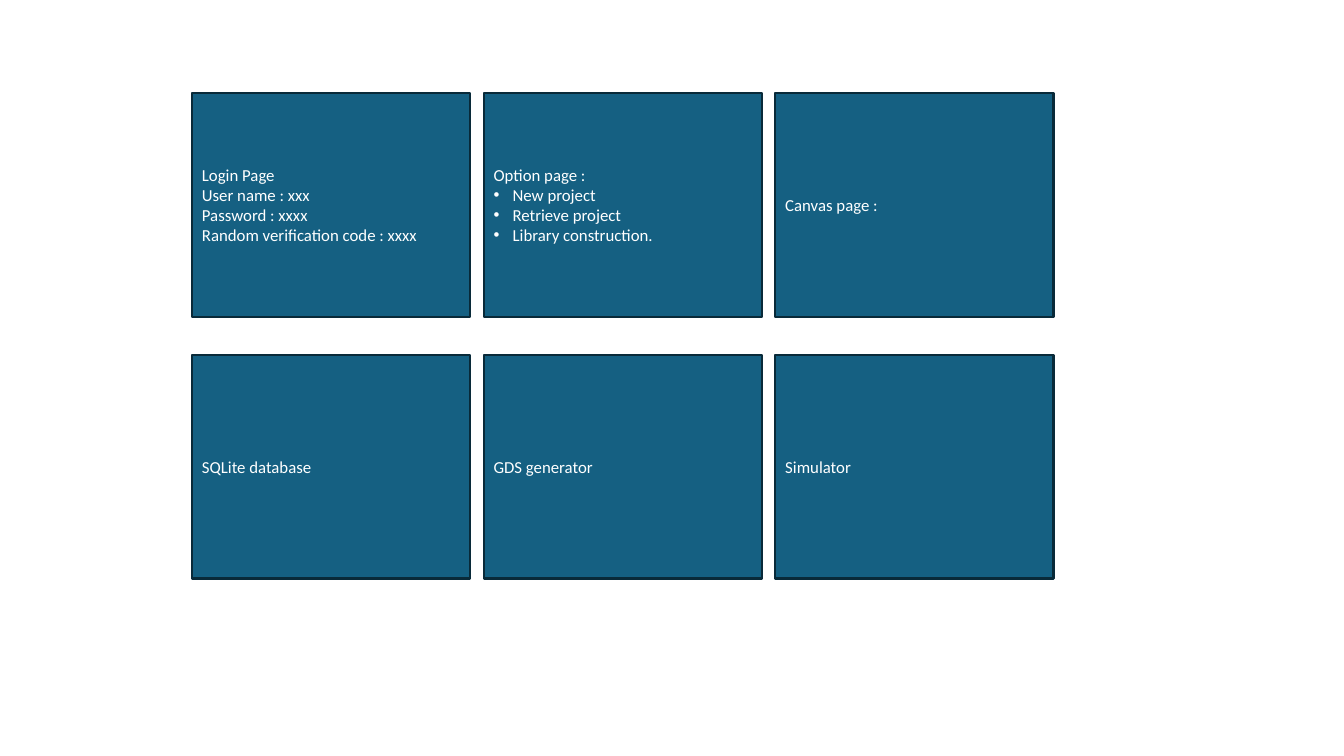
from lxml import etree
from pptx import Presentation
from pptx import util as u
from pptx.dml.color import RGBColor
from pptx.enum import shapes, text
from pptx.oxml.ns import qn

PANEL_FILL = RGBColor(0x15, 0x60, 0x82)
PANEL_LINE = RGBColor(0x09, 0x2A, 0x39)
PANEL_TEXT = RGBColor(0xFF, 0xFF, 0xFF)

BULLET_INDENT = u.Cm(0.48)
PANEL_WIDTH, PANEL_HEIGHT = u.Cm(7.01), u.Cm(5.64)
COLUMN_GAP, ROW_GAP = u.Cm(0.34), u.Cm(0.96)

PANEL_ROWS = [
    [
        (["Login Page", "User name : xxx", "Password : xxxx",
          "Random verification code : xxxx"], []),
        (["Option page :"],
         ["New project", "Retrieve project", "Library construction."]),
        (["Canvas page :"], []),
    ],
    [
        (["SQLite database"], []),
        (["GDS generator"], []),
        (["Simulator"], []),
    ],
]


def add_bullet(paragraph):
    properties = paragraph._p.get_or_add_pPr()
    properties.set("marL", str(BULLET_INDENT))
    properties.set("indent", str(-BULLET_INDENT))
    etree.SubElement(properties, qn("a:buFont"), typeface="Arial")
    etree.SubElement(properties, qn("a:buChar"), char="•")


def add_panel(slide, left, top, width, height, lines, bullets):
    panel = slide.shapes.add_shape(
        shapes.MSO_SHAPE.RECTANGLE, left, top, width, height)
    panel.shadow.inherit = False
    panel.fill.solid()
    panel.fill.fore_color.rgb = PANEL_FILL
    panel.line.color.rgb = PANEL_LINE
    panel.line.width = u.Pt(1.5)

    frame = panel.text_frame
    frame.word_wrap = True
    frame.vertical_anchor = text.MSO_ANCHOR.MIDDLE
    for index, wording in enumerate(lines + bullets):
        paragraph = frame.add_paragraph() if index else frame.paragraphs[0]
        paragraph.alignment = text.PP_ALIGN.LEFT
        if index >= len(lines):
            add_bullet(paragraph)
        run = paragraph.add_run()
        run.text = wording
        run.font.name = "Calibri"
        run.font.size = u.Pt(12)
        run.font.color.rgb = PANEL_TEXT


def add_panel_grid(slide, left, top):
    for row, panels in enumerate(PANEL_ROWS):
        for column, (lines, bullets) in enumerate(panels):
            add_panel(
                slide,
                left + column * (PANEL_WIDTH + COLUMN_GAP),
                top + row * (PANEL_HEIGHT + ROW_GAP),
                PANEL_WIDTH, PANEL_HEIGHT, lines, bullets)


def main():
    presentation = Presentation()
    presentation.slide_width = u.Cm(33.87)
    presentation.slide_height = u.Cm(19.05)
    slide = presentation.slides.add_slide(presentation.slide_layouts[6])
    add_panel_grid(slide, u.Cm(4.84), u.Cm(2.34))
    presentation.save("out.pptx")


if __name__ == "__main__":
    main()
